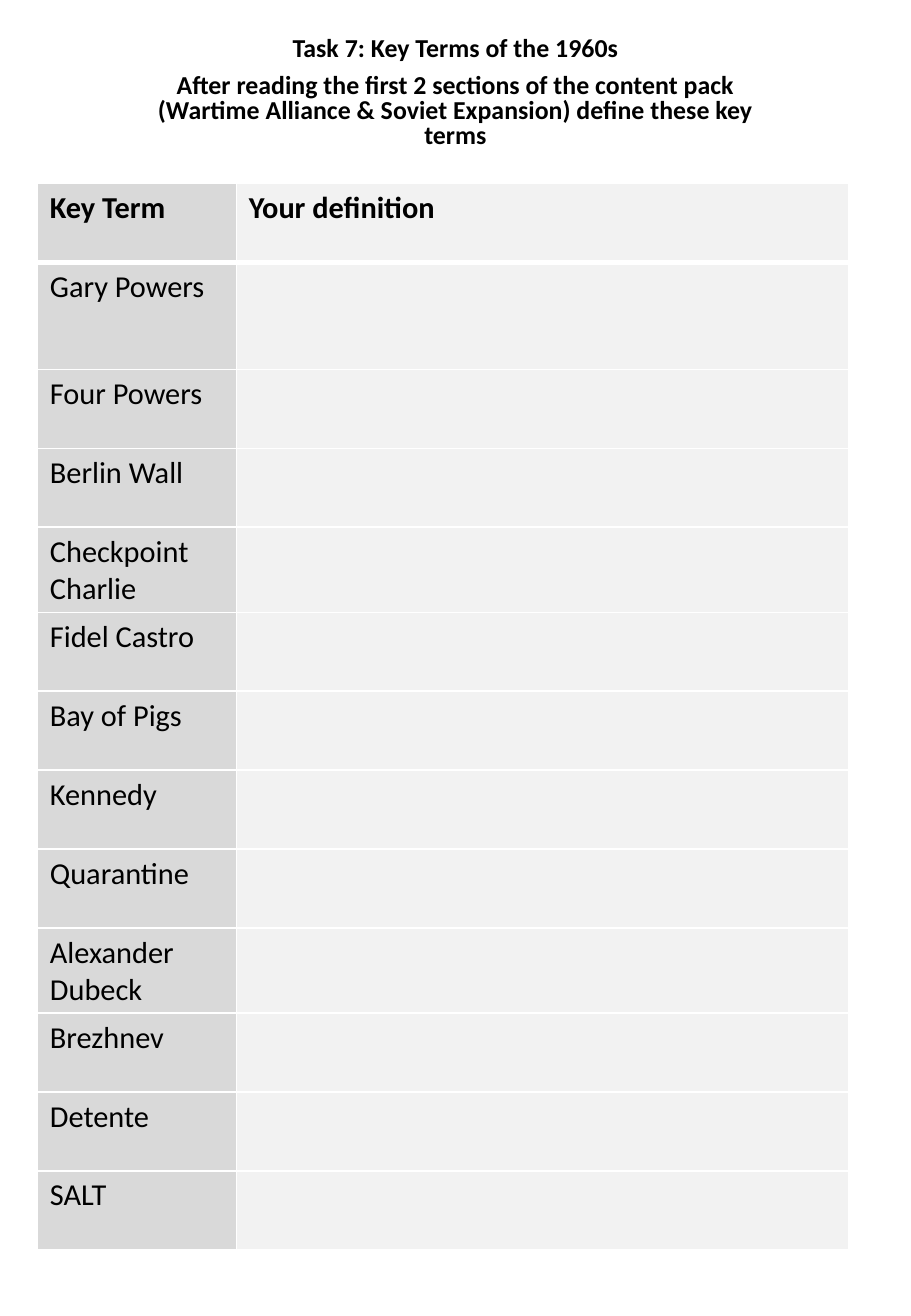
from dataclasses import dataclass

from lxml import etree
from pptx import Presentation
from pptx.dml.color import RGBColor
from pptx.enum.text import PP_ALIGN
from pptx.oxml.ns import qn
from pptx.util import Cm, Pt

CENTER = PP_ALIGN.CENTER

HEADING = [
    "Task 7: Key Terms of the 1960s",
    "After reading the first 2 sections of the content pack "
    "(Wartime Alliance & Soviet Expansion) define these key terms",
]
HEADER = ("Key Term", "Your definition")
TERMS = [
    "Gary Powers", "Four Powers", "Berlin Wall", "Checkpoint Charlie",
    "Fidel Castro", "Bay of Pigs", "Kennedy", "Quarantine",
    "Alexander Dubeck", "Brezhnev", "Detente", "SALT",
]


@dataclass(frozen=True)
class Theme:
    font: str = "Calibri"
    ink: str = "000000"
    line: str = "FFFFFF"
    fills: tuple = ("D9D9D9", "F2F2F2")
    title: float = 15.3
    body: float = 18
    thin: int = 1
    thick: int = 3


THEME = Theme()
PAGE = (Cm(19.05), Cm(27.51))
TITLE_BOX = (Cm(2.39), Cm(0.66), Cm(14.27), Cm(2.57))
LEFT, TOP = Cm(0.79), Cm(3.84)
WIDTHS = (Cm(4.16), Cm(12.8))
ROW, TALL = Cm(1.65), Cm(2.23)


def style(font, size, bold):
    font.name = THEME.font
    font.size = Pt(size)
    font.bold = bold
    font.color.rgb = RGBColor.from_string(THEME.ink)


def border(cell, sides):
    props = cell._tc.get_or_add_tcPr()
    for spot, (side, width) in enumerate(sides.items()):
        line = etree.Element(qn(f"a:ln{side}"), w=str(Pt(width)))
        fill = etree.SubElement(line, qn("a:solidFill"))
        etree.SubElement(fill, qn("a:srgbClr"), val=THEME.line)
        props.insert(spot, line)


def add_title(slide):
    frame = slide.shapes.add_textbox(*TITLE_BOX).text_frame
    frame.word_wrap = True
    frame.text = "\n".join(HEADING)
    for para in frame.paragraphs:
        para.alignment = CENTER
        para.line_spacing = 0.8
        para.space_before = Pt(7.5)
        for run in para.runs:
            style(run.font, THEME.title, True)


def add_terms(slide):
    rows = [HEADER] + [(term, "") for term in TERMS]
    heights = [ROW, TALL] + [ROW] * (len(rows) - 2)
    table = slide.shapes.add_table(
        len(rows), len(WIDTHS), LEFT, TOP, sum(WIDTHS), sum(heights)
    ).table
    table.horz_banding = False
    for col, width in zip(table.columns, WIDTHS):
        col.width = width
    for i, (row, height) in enumerate(zip(rows, heights)):
        table.rows[i].height = height
        above = THEME.thick if i == 1 else THEME.thin
        below = THEME.thick if i == 0 else THEME.thin
        for j, text in enumerate(row):
            cell = table.cell(i, j)
            cell.text = text
            cell.fill.solid()
            cell.fill.fore_color.rgb = RGBColor.from_string(THEME.fills[j])
            para = cell.text_frame.paragraphs[0]
            for part in (para, *para.runs):
                style(part.font, THEME.body, i == 0)
            border(cell, {"L": THEME.thin, "R": THEME.thin, "T": above, "B": below})


def main():
    deck = Presentation()
    deck.slide_width, deck.slide_height = PAGE
    slide = deck.slides.add_slide(deck.slide_layouts[6])
    add_title(slide)
    add_terms(slide)
    deck.save("out.pptx")


if __name__ == "__main__":
    main()
